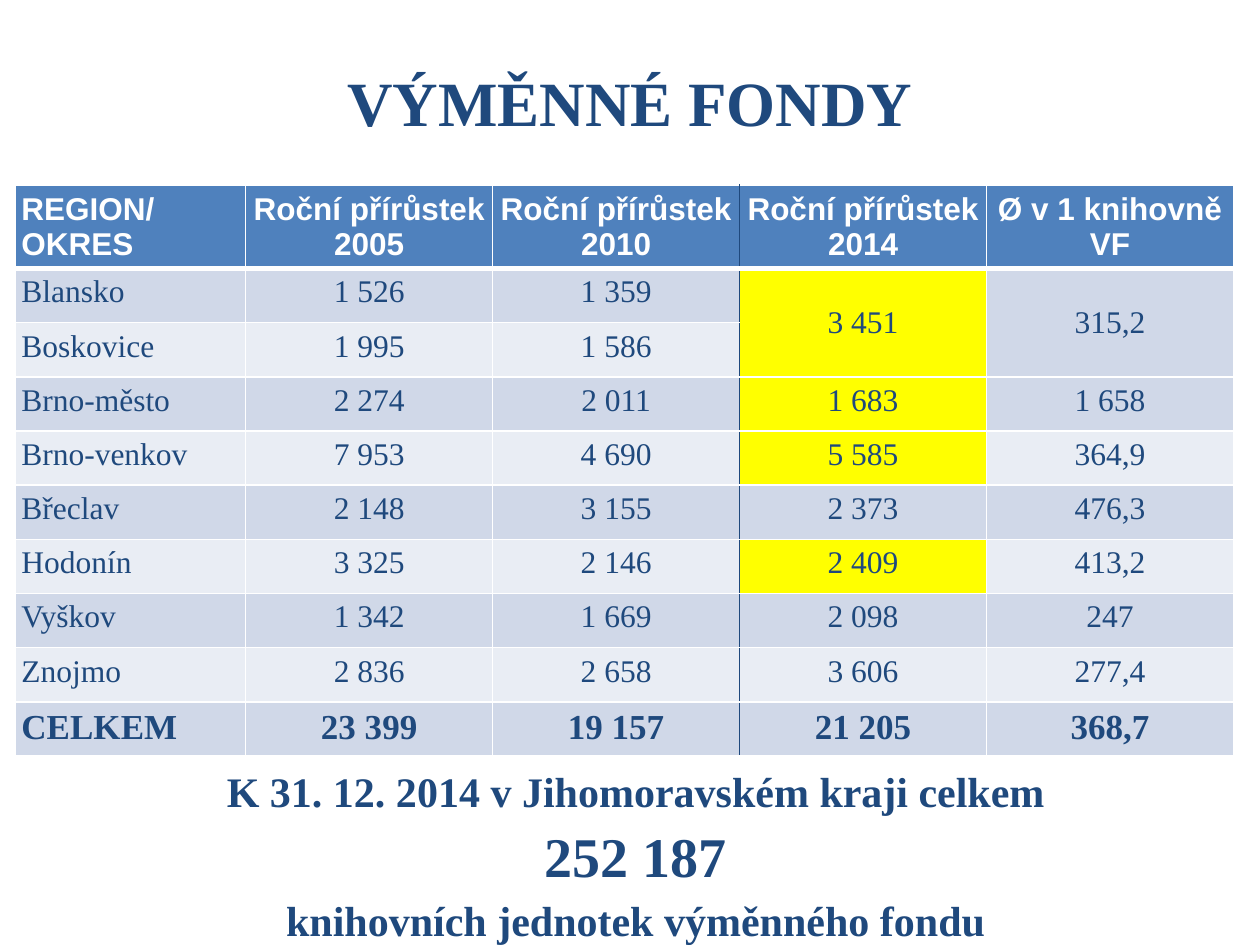
import pptx
import pptx.dml.color
import pptx.enum.text
import pptx.util
from lxml import etree
from pptx.oxml.ns import qn

Inches = pptx.util.Inches
Pt = pptx.util.Pt
ALIGN = pptx.enum.text.PP_ALIGN
ANCHOR = pptx.enum.text.MSO_ANCHOR
NAVY, WHITE, BLUE, YELLOW = "1F497D", "FFFFFF", "4F81BD", "FFFF00"
BANDS = ["D0D8E8", "E9EDF4"]
SERIF = "Times New Roman"
HEAD = ["REGION/\nOKRES", "Roční přírůstek \n2005", "Roční přírůstek \n2010",
        "Roční přírůstek \n2014", "Ø v 1 knihovně VF"]
ROWS = [
    ["Blansko", "1 526", "1 359", "3 451", "315,2"],
    ["Boskovice", "1 995", "1 586", "", ""],
    ["Brno-město", "2 274", "2 011", "1 683", "1 658"],
    ["Brno-venkov", "7 953", "4 690", "5 585", "364,9"],
    ["Břeclav", "2 148", "3 155", "2 373", "476,3"],
    ["Hodonín", "3 325", "2 146", "2 409", "413,2"],
    ["Vyškov", "1 342", "1 669", "2 098", "247"],
    ["Znojmo", "2 836", "2 658", "3 606", "277,4"],
    ["CELKEM", "23 399", "19 157", "21 205", "368,7"],
]
MARKED = {1, 2, 3, 4, 6}
YEAR = 3


def color(code):
    return pptx.dml.color.RGBColor.from_string(code)


def apply(item, style):
    for name, value in style.items():
        setattr(item, name, value)


class Deck:
    """Holds the text style and the current slide."""

    def __init__(self):
        self.file = pptx.Presentation()
        self.file.slide_width, self.file.slide_height = Inches(10), Inches(7.5)
        self.slide = self.file.slides.add_slide(self.file.slide_layouts[5])
        self.font = {"name": SERIF, "bold": True}

    def lines(self, frame, texts, sizes, align=ALIGN.CENTER, tone=NAVY, gap=0, **style):
        for i, (text, size) in enumerate(zip(texts, sizes)):
            para = frame.paragraphs[0] if i == 0 else frame.add_paragraph()
            apply(para, {"alignment": align, "space_before": Pt(gap)})
            run = para.add_run()
            run.text = text
            apply(run.font, {**self.font, "size": Pt(size), **style})
            run.font.color.rgb = color(tone)

    def title(self, text, box, size):
        shape = self.slide.shapes.title
        apply(shape, dict(zip(("left", "top", "width", "height"), map(Inches, box))))
        apply(shape.text_frame, {"vertical_anchor": ANCHOR.MIDDLE, "word_wrap": True})
        self.lines(shape.text_frame, [text], [size])

    def text(self, texts, box, sizes, gap):
        frame = self.slide.shapes.add_textbox(*map(Inches, box)).text_frame
        frame.word_wrap = True
        self.lines(frame, texts, sizes, gap=gap)

    def edges(self, cell, sides):
        props = cell._tc.get_or_add_tcPr()
        for i, (side, (tone, width)) in enumerate(zip("LRTB", sides)):
            line = etree.Element(qn(f"a:ln{side}"), w=str(Pt(width)))
            fill = etree.SubElement(line, qn("a:solidFill"))
            etree.SubElement(fill, qn("a:srgbClr"), val=tone)
            props.insert(i, line)

    def cell(self, cell, text, row, col):
        head, total = row == 0, row == len(ROWS)
        apply(cell, {f"margin_{side}": Inches(0.05)
                     for side in ("left", "right", "top", "bottom")})
        band = BLUE if head else BANDS[(row - 1) % 2]
        cell.fill.solid()
        cell.fill.fore_color.rgb = color(YELLOW if col == YEAR and row in MARKED else band)
        if text:
            texts = text.split("\n")
            self.lines(cell.text_frame, texts, [20 if total else 18] * len(texts),
                       ALIGN.CENTER if col else ALIGN.LEFT, WHITE if head else NAVY,
                       name="Arial" if head else SERIF, bold=head or total)
        self.edges(cell, [
            (NAVY if col == YEAR else WHITE, 1),
            (NAVY if col == YEAR - 1 else WHITE, 1),
            (WHITE, 3 if row == 1 else 1),
            (WHITE, 3 if head else 1),
        ])

    def table(self, data, box, widths, heights):
        frame = self.slide.shapes.add_table(len(data), len(data[0]), *map(Inches, box))
        grid = frame.table
        for col, width in zip(grid.columns, widths):
            col.width = Inches(width)
        for row, height in zip(grid.rows, heights):
            row.height = Inches(height)
        for r, line in enumerate(data):
            for c, text in enumerate(line):
                self.cell(grid.cell(r, c), text, r, c)
        for c in (YEAR, YEAR + 1):
            grid.cell(1, c).merge(grid.cell(2, c))
            grid.cell(1, c).vertical_anchor = ANCHOR.MIDDLE


def main():
    deck = Deck()
    deck.title("VÝMĚNNÉ FONDY", (0.5, 0.3, 9, 1.01), 36)
    deck.table([HEAD] + ROWS, (0.12, 1.47, 9.69, 4.53),
               [1.83] + [1.96] * 4, [0.66] + [0.43] * len(ROWS))
    deck.text(["K 31. 12. 2014 v Jihomoravském kraji celkem", "252 187",
               "knihovních jednotek výměnného fondu"],
              (0.59, 6.03, 8.91, 1.34), [24, 32, 24], 3)
    deck.file.save("out.pptx")


if __name__ == "__main__":
    main()
